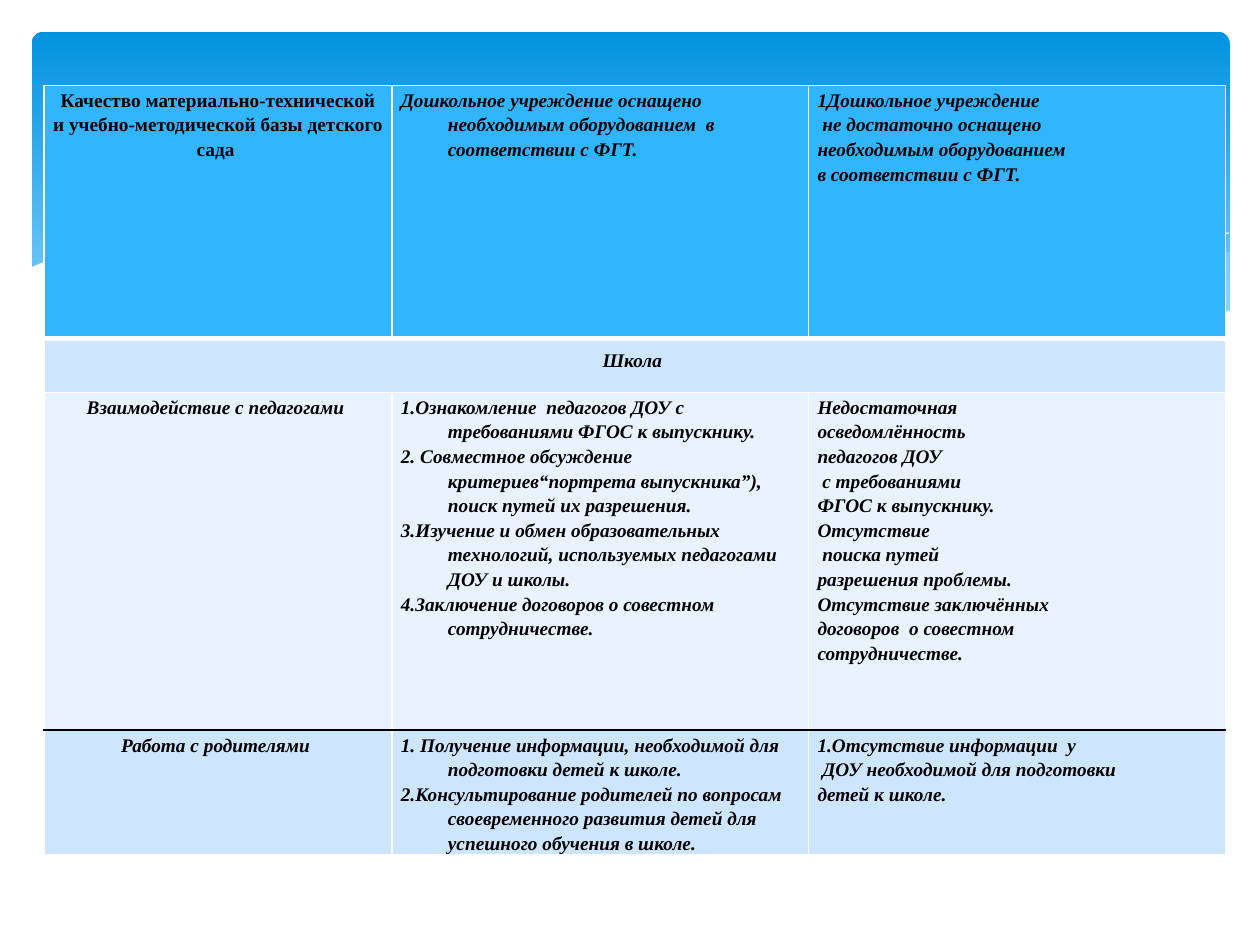
from dataclasses import dataclass

from lxml.etree import SubElement
from pptx import Presentation
from pptx.dml.color import RGBColor
from pptx.enum.shapes import MSO_SHAPE as Shape
from pptx.enum.text import PP_ALIGN as Align
from pptx.oxml.ns import qn
from pptx.util import Cm, Pt

COLORS = {
    "band_top": "0293E0",
    "band_bottom": "83D3FE",
    "wave": "C6E7FC",
    "white": "FFFFFF",
    "black": "000000",
    "header": "31B6FD",
    "row_dark": "CEE5FE",
    "row_light": "E8F3FF",
}
FONT = "Times New Roman"
COLUMN_WIDTHS = (7.01, 8.4, 8.4)


@dataclass
class Wave:
    points: list[tuple[float, float]]
    fill: str | None = None
    opacity: int = 100


@dataclass
class Entry:
    lines: list[str]
    centered: bool = False
    hanging: bool = False
    italic: bool = True
    spacing: float = 1.15


@dataclass
class Row:
    height: float
    fill: str
    entries: list[Entry]
    top: tuple[str, float] = ("white", 1)
    bottom: tuple[str, float] = ("white", 1)


WAVES = [
    Wave([(24.77, 5.08), (23.39, 5.33), (21.87, 5.66), (19.13, 6.3), (16.79, 6.73),
          (18.26, 6.91), (19.53, 7.04), (20.68, 7.06), (22.15, 6.96), (23.39, 6.73),
          (24.1, 6.53), (24.79, 6.27), (24.79, 5.08)], "wave", 29),
    Wave([(22.68, 6.93), (21.26, 6.73), (19.69, 6.45), (17.93, 6.1), (15.98, 5.64),
          (14.45, 5.28), (13.06, 5.03), (11.81, 4.85), (10.67, 4.75), (9.17, 4.7),
          (7.95, 4.78), (7.26, 4.85), (8.69, 5.05), (10.26, 5.36), (12.47, 5.89),
          (14.38, 6.3), (16.1, 6.63), (17.65, 6.86), (19, 7.01), (20.5, 7.06),
          (21.77, 7.04)], "wave", 40),
    Wave([(7.85, 4.95), (8.74, 4.83), (10.19, 4.75), (11.91, 4.8), (13.54, 4.93),
          (15.44, 5.18), (17.65, 5.56), (20.19, 6.12), (23.04, 6.91)]),
    Wave([(15.57, 6.53), (17.65, 5.97), (19.71, 5.49), (22, 5.05), (23.47, 4.83),
          (24.77, 4.7)]),
    Wave([(24.82, 6.25), (24.13, 6.5), (23.11, 6.78), (21.92, 6.96), (20.55, 7.04),
          (18.9, 6.96), (16.97, 6.73), (14.71, 6.35), (11.35, 5.59), (9.27, 5.13),
          (7.42, 4.83), (5.84, 4.7), (4.5, 4.67), (3.02, 4.75), (1.93, 4.95),
          (1.17, 5.16), (0.58, 5.41), (0.58, 8.36), (24.82, 8.36)], "white"),
]

ROWS = [
    Row(5.1, "header", [
        Entry(["Качество материально-технической и учебно-методической базы детского сада "],
              centered=True, italic=False),
        Entry(["Дошкольное учреждение оснащено необходимым оборудованием  в соответствии с ФГТ."],
              hanging=True),
        Entry(["1Дошкольное учреждение", " не достаточно оснащено",
               "необходимым оборудованием", "в соответствии с ФГТ."]),
    ], bottom=("white", 3)),
    Row(1.09, "row_dark", [Entry(["Школа "], centered=True, spacing=1.5)], top=("white", 3)),
    Row(6.81, "row_light", [
        Entry(["Взаимодействие с педагогами "], centered=True),
        Entry(["1.Ознакомление  педагогов ДОУ с требованиями ФГОС к выпускнику.",
               "2. Совместное обсуждение  критериев“портрета выпускника”), поиск путей их разрешения.",
               "3.Изучение и обмен образовательных технологий, используемых педагогами ДОУ и школы.",
               "4.Заключение договоров о совестном сотрудничестве."], hanging=True),
        Entry(["Недостаточная", "осведомлённость", "педагогов ДОУ", " с требованиями",
               "ФГОС к выпускнику.", "Отсутствие", " поиска путей", "разрешения проблемы.",
               "Отсутствие заключённых", "договоров  о совестном", "сотрудничестве."],
              hanging=True),
    ], bottom=("black", 1)),
    Row(2.36, "row_dark", [
        Entry(["Работа с родителями "], centered=True),
        Entry(["1. Получение информации, необходимой для подготовки детей к школе.",
               "2.Консультирование родителей по вопросам своевременного развития детей "
               "для успешного обучения в школе."], hanging=True),
        Entry(["1.Отсутствие информации  у", " ДОУ необходимой для подготовки",
               "детей к школе."]),
    ], top=("black", 1)),
]


def rgb(name: str) -> RGBColor:
    return RGBColor.from_string(COLORS[name])


def draw_band(slide) -> None:
    band = slide.shapes.add_shape(Shape.ROUNDED_RECTANGLE, Cm(0.64), Cm(0.64), Cm(24.15), Cm(6.86))
    band.adjustments[0] = 0.034
    band.shadow.inherit = False
    band.line.fill.background()
    band.fill.gradient()
    band.fill.gradient_angle = 270
    for stop, name, position in zip(band.fill.gradient_stops, ("band_top", "band_bottom"), (0, 0.9)):
        stop.color.rgb = rgb(name)
        stop.position = position


def draw_wave(shapes, wave: Wave) -> None:
    points = [(Cm(x), Cm(y)) for x, y in wave.points]
    builder = shapes.build_freeform(*points[0])
    builder.add_line_segments(points[1:], close=wave.fill is not None)
    shape = builder.convert_to_shape()
    shape.shadow.inherit = False
    if wave.fill is None:
        shape.fill.background()
        shape.line.color.rgb = rgb("white")
        shape.line.width = Pt(0)
        return
    shape.line.fill.background()
    shape.fill.solid()
    shape.fill.fore_color.rgb = rgb(wave.fill)
    if wave.opacity < 100:
        color = shape.fill._xPr.find(".//" + qn("a:srgbClr"))
        SubElement(color, qn("a:alpha"), val=str(wave.opacity * 1000))


def write_text(frame, lines: list[str], *, centered: bool, hanging: bool,
               italic: bool, spacing: float) -> None:
    for index, line in enumerate(lines):
        paragraph = frame.add_paragraph() if index else frame.paragraphs[0]
        paragraph.alignment = Align.CENTER if centered else Align.LEFT
        paragraph.line_spacing = spacing
        if hanging:
            properties = paragraph._p.get_or_add_pPr()
            properties.set("marL", str(Cm(0.95)))
            properties.set("indent", str(-Cm(0.95)))
        run = paragraph.add_run()
        run.text = line
        run.font.name = FONT
        run.font.size = Pt(11)
        run.font.bold = True
        run.font.italic = italic
        run.font.color.rgb = rgb("black")


def style_cell(cell, row: Row) -> None:
    cell.margin_left = cell.margin_right = Cm(0.18)
    cell.margin_top = Cm(0.03)
    cell.margin_bottom = Cm(0)
    properties = cell._tc.get_or_add_tcPr()
    side = ("white", 1)
    for tag, (name, width) in zip(("lnL", "lnR", "lnT", "lnB"), (side, side, row.top, row.bottom)):
        line = SubElement(properties, qn(f"a:{tag}"), w=str(Pt(width)))
        SubElement(SubElement(line, qn("a:solidFill")), qn("a:srgbClr"), val=COLORS[name])
    cell.fill.solid()
    cell.fill.fore_color.rgb = rgb(row.fill)


def draw_table(slide) -> None:
    table = slide.shapes.add_table(
        len(ROWS), len(COLUMN_WIDTHS), Cm(0.89), Cm(1.72),
        Cm(sum(COLUMN_WIDTHS)), Cm(sum(row.height for row in ROWS))).table
    table.first_row = table.horz_banding = False
    for column, width in zip(table.columns, COLUMN_WIDTHS):
        column.width = Cm(width)
    for index, row in enumerate(ROWS):
        table.rows[index].height = Cm(row.height)
        cells = list(table.rows[index].cells)
        for cell in cells:
            style_cell(cell, row)
        if len(row.entries) == 1:
            cells[0].merge(cells[-1])
        for cell, entry in zip(cells, row.entries):
            write_text(cell.text_frame, entry.lines, centered=entry.centered,
                       hanging=entry.hanging, italic=entry.italic, spacing=entry.spacing)


def main() -> None:
    presentation = Presentation()
    presentation.slide_width = Cm(25.4)
    presentation.slide_height = Cm(19.05)
    slide = presentation.slides.add_slide(presentation.slide_layouts[6])
    draw_band(slide)
    waves = slide.shapes.add_group_shape()
    for wave in WAVES:
        draw_wave(waves.shapes, wave)
    draw_table(slide)
    presentation.save("out.pptx")


if __name__ == "__main__":
    main()
